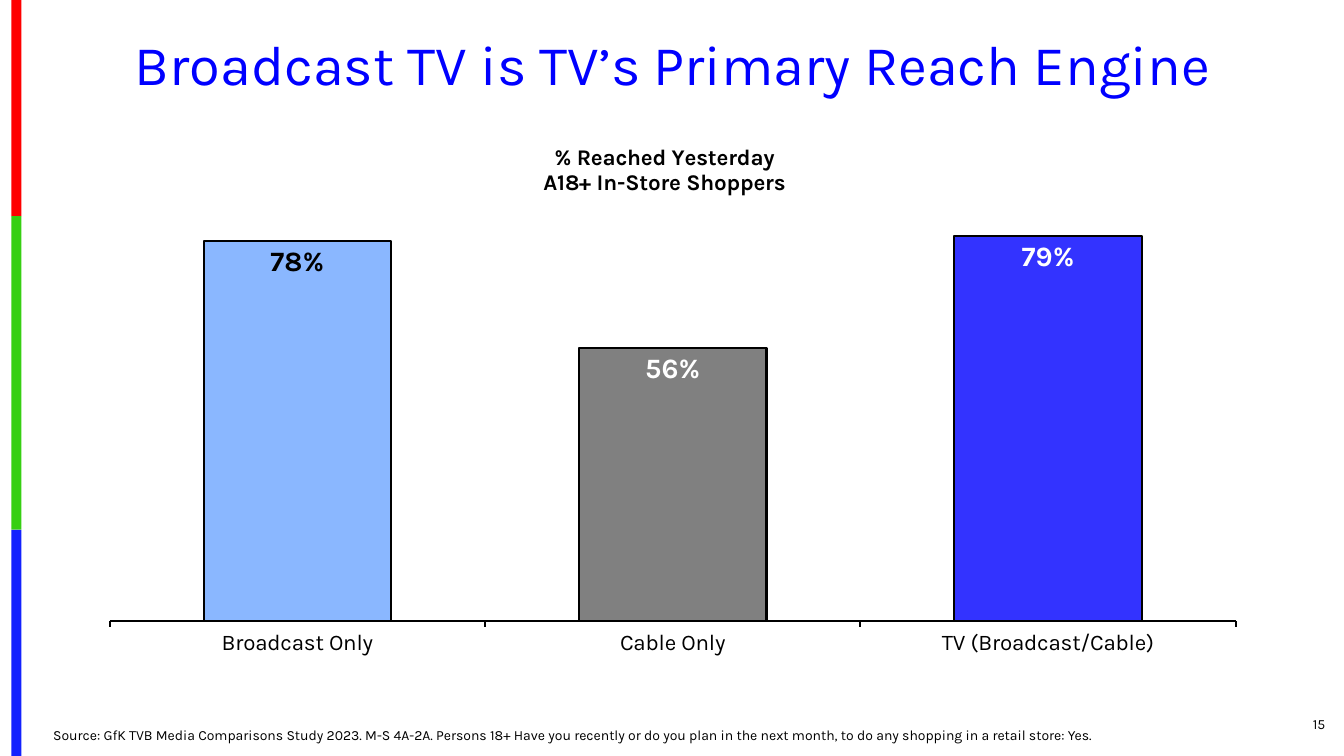
from dataclasses import dataclass

from lxml import etree
from pptx import Presentation
from pptx.chart.chart import Chart
from pptx.chart.data import CategoryChartData
from pptx.dml.color import RGBColor
from pptx.enum.chart import XL_CHART_TYPE as ChartType
from pptx.enum.chart import XL_LABEL_POSITION as LabelPosition
from pptx.enum.chart import XL_TICK_LABEL_POSITION as TickLabelPosition
from pptx.enum.chart import XL_TICK_MARK as TickMark
from pptx.enum.shapes import MSO_SHAPE as Preset
from pptx.enum.text import MSO_ANCHOR as Anchor
from pptx.enum.text import PP_ALIGN as Align
from pptx.oxml.ns import qn
from pptx.slide import Slide
from pptx.util import Cm, Pt

FONT = "Karla"
BLACK = RGBColor(0x00, 0x00, 0x00)
WHITE = RGBColor(0xFF, 0xFF, 0xFF)
TITLE_BLUE = RGBColor(0x00, 0x00, 0xFF)
STRIPE_RED = RGBColor(0xFE, 0x00, 0x00)
STRIPE_GREEN = RGBColor(0x36, 0xCF, 0x12)
STRIPE_BLUE = RGBColor(0x13, 0x22, 0xFE)
BAR_BLUE = RGBColor(0x33, 0x33, 0xFF)
BAR_LIGHT = RGBColor(0x8A, 0xB7, 0xFF)
BAR_GRAY = RGBColor(0x80, 0x80, 0x80)


@dataclass
class Stripe:
    height: float
    color: RGBColor


@dataclass
class Label:
    text: str
    left: float
    top: float
    width: float
    height: float
    size: int
    color: RGBColor
    align: Align
    anchor: Anchor
    line_spacing: float = 1.0


@dataclass
class Bar:
    category: str
    value: float
    fill: RGBColor
    label_color: RGBColor


STRIPES = [Stripe(5.45, STRIPE_RED), Stripe(7.9, STRIPE_GREEN), Stripe(5.7, STRIPE_BLUE)]
LABELS = [
    Label("Broadcast TV is TV’s Primary Reach Engine", 1.17, 0.79, 31.55, 1.8,
          40, TITLE_BLUE, Align.CENTER, Anchor.MIDDLE, 0.9),
    Label("15", 30.91, 17.73, 2.74, 1.02, 10, BLACK, Align.RIGHT, Anchor.MIDDLE),
    Label("Source: GfK TVB Media Comparisons Study 2023. M-S 4A-2A. Persons 18+ Have you "
          "recently or do you plan in the next month, to do any shopping in a retail store: Yes.",
          1.09, 17.83, 27.08, 1.02, 10, BLACK, Align.LEFT, Anchor.BOTTOM, 0.9),
]
BARS = [
    Bar("Broadcast Only", 0.78, BAR_LIGHT, BLACK),
    Bar("Cable Only", 0.56, BAR_GRAY, WHITE),
    Bar("TV (Broadcast/Cable)", 0.79, BAR_BLUE, WHITE),
]
CHART_TITLE = ["% Reached Yesterday", "A18+ In-Store Shoppers"]


def style_font(font, size: int, color: RGBColor, bold: bool = False) -> None:
    font.name = FONT
    font.size = Pt(size)
    font.bold = bold
    font.color.rgb = color


def draw_stripes(slide: Slide, stripes: list[Stripe]) -> None:
    top = 0.0
    for stripe in stripes:
        shape = slide.shapes.add_shape(
            Preset.RECTANGLE, Cm(0.29), Cm(top), Cm(0.25), Cm(stripe.height))
        shape.shadow.inherit = False
        shape.fill.solid()
        shape.fill.fore_color.rgb = stripe.color
        shape.line.fill.background()
        top += stripe.height


def draw_label(slide: Slide, label: Label) -> None:
    shape = slide.shapes.add_textbox(
        Cm(label.left), Cm(label.top), Cm(label.width), Cm(label.height))
    frame = shape.text_frame
    frame.word_wrap = True
    frame.vertical_anchor = label.anchor
    paragraph = frame.paragraphs[0]
    paragraph.alignment = label.align
    paragraph.line_spacing = label.line_spacing
    run = paragraph.add_run()
    run.text = label.text
    style_font(run.font, label.size, label.color)


def set_layout(parent, following: str, values: dict[str, str]) -> None:
    for existing in parent.findall(qn("c:layout")):
        parent.remove(existing)
    layout = etree.Element(qn("c:layout"))
    manual = etree.SubElement(layout, qn("c:manualLayout"))
    for name, value in values.items():
        etree.SubElement(manual, qn(f"c:{name}")).set("val", value)
    parent.find(qn(following)).addprevious(layout)


def add_chart_title(chart: Chart) -> None:
    chart.has_title = True
    title = chart.chart_title
    title.include_in_layout = False
    frame = title.text_frame
    for index, text in enumerate(CHART_TITLE):
        paragraph = frame.add_paragraph() if index else frame.paragraphs[0]
        paragraph.alignment = Align.CENTER
        run = paragraph.add_run()
        run.text = text
        style_font(run.font, 16, BLACK, True)
    set_layout(title._element, "c:overlay",
               {"xMode": "edge", "yMode": "edge", "x": "0.39", "y": "0.07"})


def style_axes(chart: Chart) -> None:
    category_axis = chart.category_axis
    category_axis.major_tick_mark = TickMark.OUTSIDE
    category_axis.tick_label_position = TickLabelPosition.LOW
    category_axis.format.line.color.rgb = BLACK
    category_axis.format.line.width = Pt(1.5)
    style_font(category_axis.tick_labels.font, 16, BLACK)
    value_axis = chart.value_axis
    value_axis.minimum_scale = 0
    value_axis.maximum_scale = 0.9
    value_axis.has_major_gridlines = False
    value_axis.visible = False


def draw_chart(slide: Slide, bars: list[Bar]) -> None:
    data = CategoryChartData(number_format="0%")
    data.categories = [bar.category for bar in bars]
    data.add_series("Series 1", [bar.value for bar in bars])
    chart = slide.shapes.add_chart(
        ChartType.COLUMN_CLUSTERED, Cm(1.73), Cm(2.49), Cm(30.48), Cm(14.91), data).chart
    chart.has_legend = False
    style_font(chart.font, 10, BLACK)
    add_chart_title(chart)
    style_axes(chart)
    set_layout(chart._chartSpace.chart.plotArea, "c:barChart",
               {"layoutTarget": "inner", "xMode": "edge", "yMode": "edge",
                "x": "0.034", "y": "0.142", "w": "0.931", "h": "0.74"})
    plot = chart.plots[0]
    plot.gap_width = 100
    plot.vary_by_categories = False
    series = plot.series[0]
    series.format.fill.solid()
    series.format.fill.fore_color.rgb = BAR_BLUE
    labels = series.data_labels
    labels.show_value = True
    labels.number_format = "0%"
    labels.number_format_is_linked = False
    labels.position = LabelPosition.INSIDE_END
    style_font(labels.font, 20, WHITE, True)
    for index, bar in enumerate(bars):
        point = series.points[index]
        point.format.fill.solid()
        point.format.fill.fore_color.rgb = bar.fill
        point.format.line.color.rgb = BLACK
        point.format.line.width = Pt(1.5)
        if bar.label_color != WHITE:
            style_font(point.data_label.font, 20, bar.label_color, True)
            point.data_label.position = LabelPosition.INSIDE_END


def main() -> None:
    presentation = Presentation()
    presentation.slide_width = Cm(33.87)
    presentation.slide_height = Cm(19.05)
    slide = presentation.slides.add_slide(presentation.slide_layouts[6])
    draw_stripes(slide, STRIPES)
    for label in LABELS:
        draw_label(slide, label)
    draw_chart(slide, BARS)
    presentation.save("out.pptx")


if __name__ == "__main__":
    main()
